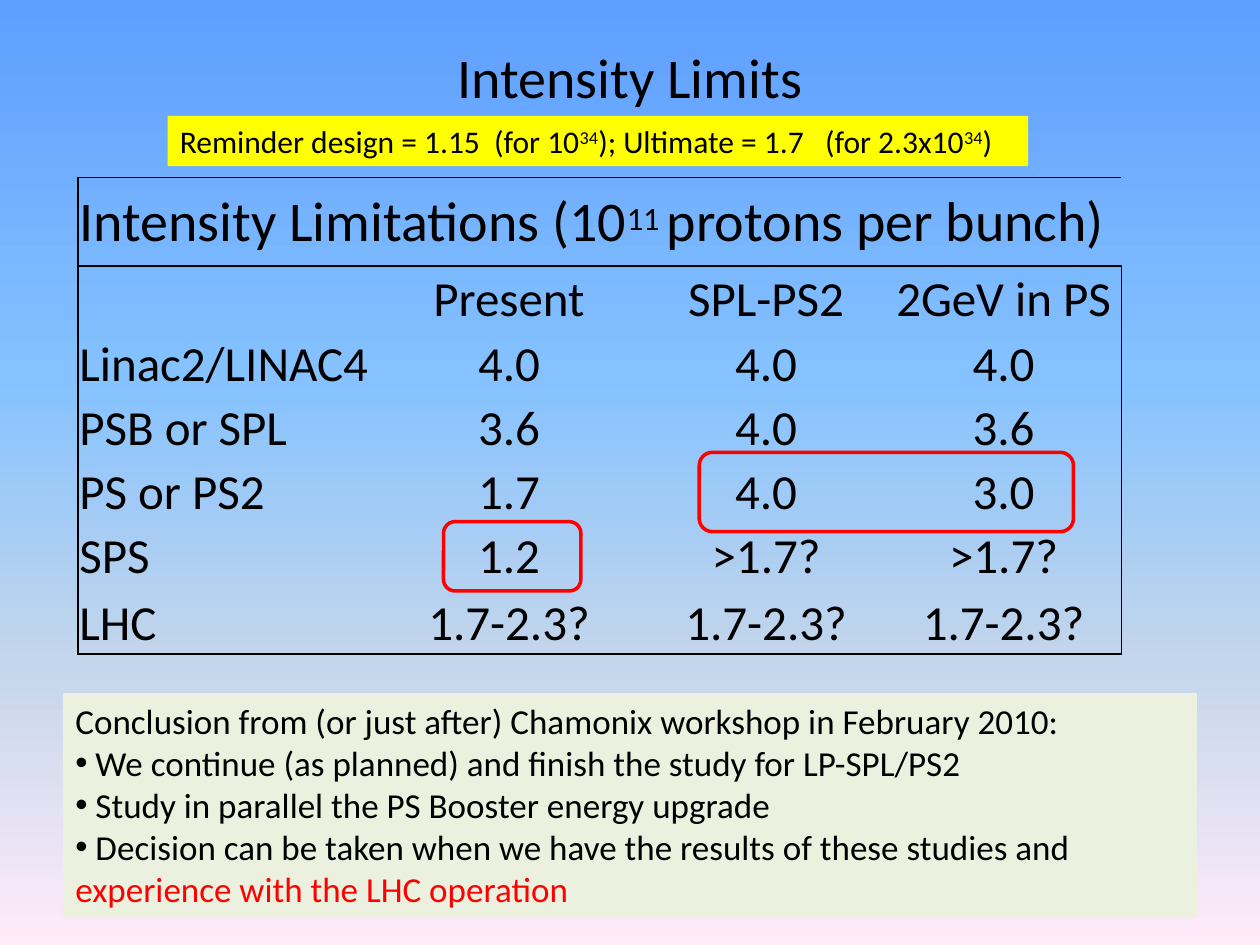
"""Build the slide on intensity limits along the accelerator chain."""
from lxml.etree import SubElement
from pptx import Presentation
from pptx.dml.color import RGBColor
from pptx.enum.shapes import MSO_SHAPE
from pptx.enum.text import MSO_ANCHOR, PP_ALIGN
from pptx.oxml.ns import qn
from pptx.util import Inches, Pt

COLORS = {"black": "000000", "red": "FF0000", "yellow": "FFFF00", "green": "EBF1DE"}
GRADIENT = {0: "5E9EFF", 40: "85C2FF", 70: "C4D6EB", 100: "FFEBFA"}
FONT = "Calibri"
PLAIN_TABLE_STYLE = "{2D5ABB26-0587-4C30-8999-92F81FD0307C}"
COLUMN_WIDTHS = [2.33, 2.18, 1.9, 1.87]
ROW_HEIGHTS = [0.7] + [0.51] * 5 + [0.53]
TABLE_TITLE = [("Intensity Limitations (10", {}), ("11 ", {"baseline": 20}),
               ("protons per bunch)", {})]
LIMITS = [
    ["", "Present", "SPL-PS2", "2GeV in PS"],
    ["Linac2/LINAC4", "4.0", "4.0", "4.0"],
    ["PSB or SPL", "3.6", "4.0", "3.6"],
    ["PS or PS2", "1.7", "4.0", "3.0"],
    ["SPS", "1.2", ">1.7?", ">1.7?"],
    ["LHC", "1.7-2.3?", "1.7-2.3?", "1.7-2.3?"],
]
EXPONENT = ("34", {"baseline": 30})
REMINDER = [("Reminder design = 1.15  (for 10", {}), EXPONENT,
            ("); Ultimate = 1.7   (for 2.3x10", {}), EXPONENT, (")", {})]
CONCLUSION = [
    [("Conclusion from (or just after) Chamonix workshop in February 2010:", {})],
    [(" We continue (as planned) and finish the study for LP-SPL/PS2", {})],
    [(" Study in parallel the PS Booster energy upgrade", {})],
    [(" Decision can be taken when we have the results of these studies and ", {}),
     ("experience with the LHC operation", {"color": "red"})],
]


def rgb(name):
    """Return the named colour."""
    return RGBColor.from_string(COLORS[name])


def set_attributes(target, values):
    """Set each attribute of the target from a dict."""
    for name, value in values.items():
        setattr(target, name, value)


def add_runs(paragraph, runs, size):
    """Fill a paragraph with runs, each with its own colour and baseline."""
    for text, style in runs:
        run = paragraph.add_run()
        set_attributes(run, {"text": text})
        set_attributes(run.font, {"name": FONT, "size": Pt(size)})
        run.font.color.rgb = rgb(style.get("color", "black"))
        if "baseline" in style:
            run.font._element.set("baseline", str(style["baseline"] * 1000))


def add_bullet(paragraph):
    """Put a round bullet before a paragraph."""
    properties = paragraph._p.get_or_add_pPr()
    SubElement(properties, qn("a:buFont")).set("typeface", "Arial")
    SubElement(properties, qn("a:buChar")).set("char", "•")


def set_gradient(slide):
    """Give the slide a vertical gradient background."""
    fill = slide.background.fill
    fill.gradient()
    fill.gradient_angle = 270
    stops = slide.background._cSld.find(".//" + qn("a:gsLst"))
    stops.clear()
    for position, color in GRADIENT.items():
        stop = SubElement(stops, qn("a:gs"))
        stop.set("pos", str(position * 1000))
        SubElement(stop, qn("a:srgbClr")).set("val", color)


def add_text_box(slide, box, paragraphs, size, fill=None, **frame_values):
    """Add a text box and return its paragraphs."""
    shape = slide.shapes.add_textbox(*map(Inches, box))
    if fill:
        shape.fill.solid()
        shape.fill.fore_color.rgb = rgb(fill)
    frame = shape.text_frame
    set_attributes(frame, {"word_wrap": True, **frame_values})
    for index, runs in enumerate(paragraphs):
        paragraph = frame.add_paragraph() if index else frame.paragraphs[0]
        add_runs(paragraph, runs, size)
    return frame.paragraphs


def add_highlight(slide, box):
    """Add a red rounded outline around table values."""
    shape = slide.shapes.add_shape(MSO_SHAPE.ROUNDED_RECTANGLE, *map(Inches, box))
    shape.shadow.inherit = False
    shape.fill.background()
    shape.line.color.rgb = rgb("red")
    shape.line.width = Pt(2)


def set_borders(cell, sides):
    """Draw the given sides of a cell in black and hide the others."""
    properties = cell._tc.get_or_add_tcPr()
    for index, side in enumerate("LRTB"):
        line = SubElement(properties, qn(f"a:ln{side}"))
        line.set("w", str(Pt(1)))
        if side in sides:
            fill = SubElement(line, qn("a:solidFill"))
            SubElement(fill, qn("a:srgbClr")).set("val", COLORS["black"])
        else:
            SubElement(line, qn("a:noFill"))
        properties.insert(index, line)


def format_cell(cell, row, column):
    """Set the margins, fill and outer borders of a cell."""
    margin = Inches(0.01)
    set_attributes(cell, {
        "margin_left": margin, "margin_right": margin, "margin_top": margin,
        "margin_bottom": 0,
        "vertical_anchor": MSO_ANCHOR.BOTTOM if row else MSO_ANCHOR.MIDDLE,
    })
    cell.fill.background()
    edges = {"L": column == 0, "R": column == len(COLUMN_WIDTHS) - 1,
             "T": row < 2, "B": row in (0, len(ROW_HEIGHTS) - 1)}
    set_borders(cell, [side for side, drawn in edges.items() if drawn])


def add_limits_table(slide, left, top):
    """Add the table of intensity limits."""
    frame = slide.shapes.add_table(
        len(ROW_HEIGHTS), len(COLUMN_WIDTHS), Inches(left), Inches(top),
        Inches(sum(COLUMN_WIDTHS)), Inches(sum(ROW_HEIGHTS)))
    table = frame.table
    set_attributes(table, {"first_row": False, "horz_banding": False})
    table._tbl.tblPr.find(qn("a:tableStyleId")).text = PLAIN_TABLE_STYLE
    for column, width in zip(table.columns, COLUMN_WIDTHS):
        column.width = Inches(width)
    for row, height in zip(table.rows, ROW_HEIGHTS):
        row.height = Inches(height)
    for row in range(len(ROW_HEIGHTS)):
        for column in range(len(COLUMN_WIDTHS)):
            format_cell(table.cell(row, column), row, column)
    title = table.cell(0, 0)
    title.merge(table.cell(0, len(COLUMN_WIDTHS) - 1))
    add_runs(title.text_frame.paragraphs[0], TABLE_TITLE, 32)
    for row, values in enumerate(LIMITS, start=1):
        for column, value in enumerate(values):
            paragraph = table.cell(row, column).text_frame.paragraphs[0]
            paragraph.alignment = PP_ALIGN.CENTER if column else PP_ALIGN.LEFT
            if value:
                add_runs(paragraph, [(value, {})], 28)


def main():
    """Build and save the slide."""
    presentation = Presentation()
    set_attributes(presentation, {"slide_width": Inches(10), "slide_height": Inches(7.5)})
    slide = presentation.slides.add_slide(presentation.slide_layouts[6])
    set_gradient(slide)
    title = add_text_box(slide, (0.5, 0.17, 9, 0.87), [[("Intensity Limits", {})]], 32,
                         vertical_anchor=MSO_ANCHOR.MIDDLE)
    title[0].alignment = PP_ALIGN.CENTER
    add_limits_table(slide, 0.62, 1.41)
    add_highlight(slide, (5.55, 3.59, 2.97, 0.63))
    add_text_box(slide, (1.33, 0.92, 6.83, 0.4), [REMINDER], 18, "yellow")
    conclusion = add_text_box(slide, (0.5, 5.5, 9, 1.78), CONCLUSION, 20, "green")
    for paragraph in conclusion[1:]:
        add_bullet(paragraph)
    add_highlight(slide, (3.52, 4.14, 1.09, 0.55))
    presentation.save("out.pptx")


if __name__ == "__main__":
    main()
